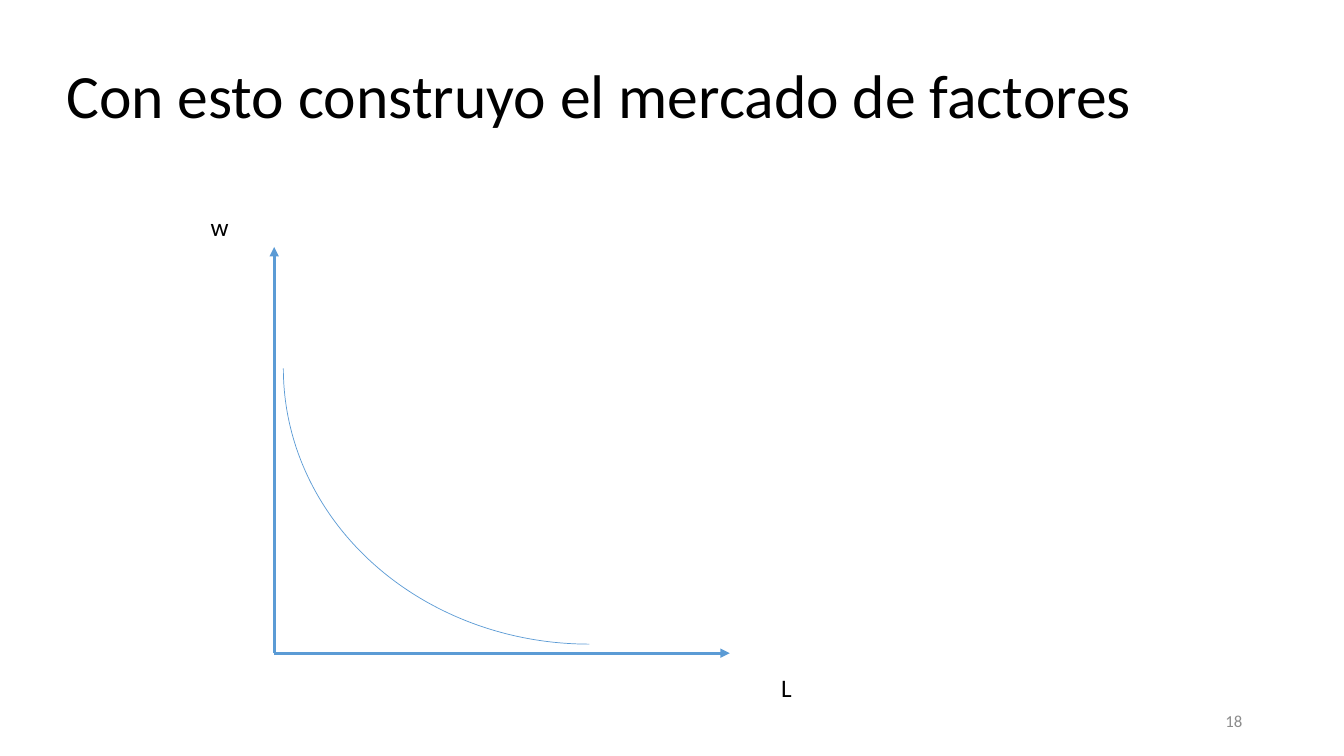
import pptx
import pptx.util
import pptx.dml.color
import pptx.enum.shapes
import pptx.enum.text
import pptx.oxml.ns
import lxml.etree
from dataclasses import dataclass


@dataclass(frozen=True)
class Theme:
    font: str = "Calibri"
    ink: str = "000000"
    grey: str = "8C8C8C"
    blue: str = "5B9BD5"
    title: int = 44
    label: int = 18
    small: int = 12
    axis: float = 2.25
    curve: float = 0.5


theme = Theme()
color = pptx.dml.color.RGBColor.from_string
align = pptx.enum.text.PP_ALIGN
anchor = pptx.enum.text.MSO_ANCHOR
qn = pptx.oxml.ns.qn

deck = pptx.Presentation()
deck.slide_width = pptx.util.Inches(13.33)
deck.slide_height = pptx.util.Inches(7.5)
slide = deck.slides.add_slide(deck.slide_layouts[6])
shapes = slide.shapes


def place(*grid):
    """Turn x, y pairs, in percent of the slide, into lengths."""
    sides = (deck.slide_width, deck.slide_height)
    return [int(sides[i % 2] * share / 100) for i, share in enumerate(grid)]


# Axes share one origin
left, base = 20.4, 86.4
top, right = 32.67, 54.3


def draw_axis(x, y):
    axis = shapes.add_connector(
        pptx.enum.shapes.MSO_CONNECTOR.STRAIGHT, *place(left, base, x, y))
    axis.line.color.rgb = color(theme.blue)
    axis.line.width = pptx.util.Pt(theme.axis)
    tail = lxml.etree.SubElement(axis.line._get_or_add_ln(), qn("a:tailEnd"))
    tail.set("type", "triangle")
    lxml.etree.SubElement(axis._element.spPr, qn("a:effectLst"))


draw_axis(left, top)

# Demand curve: a quarter ellipse turned to face the origin
curve = shapes.add_shape(
    pptx.enum.shapes.MSO_SHAPE.ARC, *place(21.08, 12.27, 45.53, 72.93))
curve.rotation = 180
curve.shadow.inherit = False
curve.fill.background()
curve.line.color.rgb = color(theme.blue)
curve.line.width = pptx.util.Pt(theme.curve)

draw_axis(right, base)

# Text: wording, place, size, colour, alignment, anchor, line spacing
texts = [
    ("w", (14.93, 27.33, 6.23, 5.33),
     theme.label, theme.ink, align.LEFT, anchor.TOP, 1.0),
    ("L", (57.39, 88.27, 6.23, 5.33),
     theme.label, theme.ink, align.LEFT, anchor.TOP, 1.0),
    ("Con esto construyo el mercado de factores", (4.2, 3.33, 86.27, 19.33),
     theme.title, theme.ink, align.LEFT, anchor.MIDDLE, 0.9),
    ("18", (70.67, 92.67, 22.5, 5.33),
     theme.small, theme.grey, align.RIGHT, anchor.MIDDLE, 1.0),
]
for words, area, size, ink, side, hold, space in texts:
    frame = shapes.add_textbox(*place(*area)).text_frame
    frame.word_wrap = True
    frame.vertical_anchor = hold
    line = frame.paragraphs[0]
    line.text = words
    line.alignment = side
    line.line_spacing = space
    line.font.name = theme.font
    line.font.size = pptx.util.Pt(size)
    line.font.color.rgb = color(ink)

deck.save("out.pptx")
